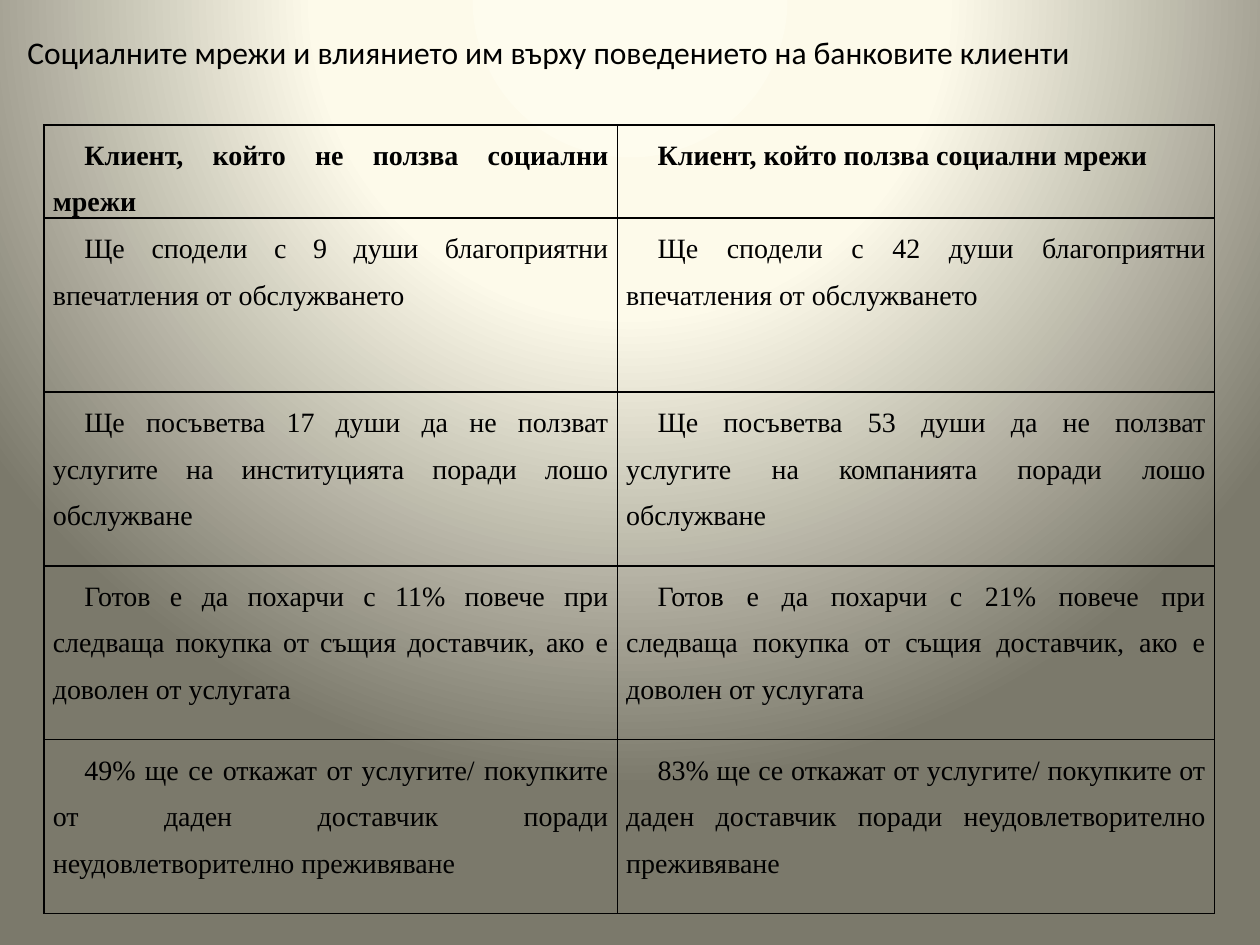
from dataclasses import dataclass

from pptx import Presentation
from pptx.dml.color import RGBColor
from pptx.enum.text import MSO_ANCHOR, MSO_AUTO_SIZE, PP_ALIGN
from pptx.oxml import parse_xml
from pptx.oxml.ns import nsdecls, qn
from pptx.util import Inches, Pt


@dataclass(frozen=True)
class Theme:
    ink: str = "000000"
    glow: tuple = ((0, "FEFCEE"), (40, "FDFAEA"), (100, "7B796B"))
    title_font: str = "Calibri"
    table_font: str = "Times New Roman"
    title_size: int = 18
    table_size: int = 16
    border_width: int = 1


@dataclass(frozen=True)
class Comparison:
    offline: str
    social: str


THEME = Theme()
WIDTH, HEIGHT = 10, 7.5
COLUMNS = (4.55, 4.74)
HEADER_HEIGHT, ROW_HEIGHT = 0.69, 1.38
TITLE = "Социалните мрежи и влиянието им върху поведението на банковите клиенти"
COMPARISONS = (
    Comparison("Клиент, който не ползва социални мрежи",
               "Клиент, който ползва социални мрежи"),
    Comparison("Ще сподели с 9 души благоприятни впечатления от обслужването",
               "Ще сподели с 42 души благоприятни впечатления от обслужването"),
    Comparison("Ще посъветва 17 души да не ползват услугите на институцията поради лошо обслужване",
               "Ще посъветва 53 души да не ползват услугите на компанията поради лошо обслужване"),
    Comparison("Готов е да похарчи с 11% повече при следваща покупка от същия доставчик, "
               "ако е доволен от услугата",
               "Готов е да похарчи с 21% повече при следваща покупка от същия доставчик, "
               "ако е доволен от услугата"),
    Comparison("49% ще се откажат от услугите/ покупките от даден доставчик поради "
               "неудовлетворително преживяване",
               "83% ще се откажат от услугите/ покупките от даден доставчик поради "
               "неудовлетворително преживяване"),
)


def style_font(font, name: str, size: int, bold: bool = False) -> None:
    font.name, font.size, font.bold = name, Pt(size), bold
    font.color.rgb = RGBColor.from_string(THEME.ink)


def paint_background(page) -> None:
    """Fill the page with a round glow centred above its top edge."""
    page.background.fill.gradient()
    gradient = page.element.find(".//" + qn("a:gradFill"))
    stops = "".join(
        f'<a:gs pos="{share * 1000}"><a:srgbClr val="{color}"/></a:gs>'
        for share, color in THEME.glow)
    gradient.getparent().replace(gradient, parse_xml(
        f'<a:gradFill {nsdecls("a")} rotWithShape="1"><a:gsLst>{stops}</a:gsLst>'
        '<a:path path="circle"><a:fillToRect l="50000" t="-80000" r="50000" b="180000"/>'
        '</a:path></a:gradFill>'))


def add_borders(cell) -> None:
    properties = cell._tc.get_or_add_tcPr()
    for position, side in enumerate("LRTB"):
        properties.insert(position, parse_xml(
            f'<a:ln{side} {nsdecls("a")} w="{Pt(THEME.border_width)}">'
            f'<a:solidFill><a:srgbClr val="{THEME.ink}"/></a:solidFill></a:ln{side}>'))


def fill_cell(cell, text: str, bold: bool) -> None:
    cell.fill.background()
    add_borders(cell)
    cell.margin_left = cell.margin_right = Inches(0.07)
    cell.margin_top = cell.margin_bottom = 0
    cell.vertical_anchor = MSO_ANCHOR.TOP
    para = cell.text_frame.paragraphs[0]
    para.text = text
    para.alignment = PP_ALIGN.JUSTIFY
    para.line_spacing = 1.5
    indents = para._p.get_or_add_pPr()
    indents.set("marL", "0")
    indents.set("indent", str(Inches(0.25)))
    style_font(para.runs[0].font, THEME.table_font, THEME.table_size, bold)


def add_comparison_table(page) -> None:
    heights = [HEADER_HEIGHT] + [ROW_HEIGHT] * (len(COMPARISONS) - 1)
    table = page.shapes.add_table(
        len(heights), len(COLUMNS), Inches(0.35), Inches(0.99),
        Inches(sum(COLUMNS)), Inches(sum(heights))).table
    table.horz_banding = False
    for column, width in zip(table.columns, COLUMNS):
        column.width = Inches(width)
    for index, (row, height, entry) in enumerate(zip(table.rows, heights, COMPARISONS)):
        row.height = Inches(height)
        for cell, text in zip(row.cells, (entry.offline, entry.social)):
            fill_cell(cell, text, bold=index == 0)


def add_title(page) -> None:
    box = page.shapes.add_textbox(Inches(0.12), Inches(0.21), Inches(9.53), Inches(0.4))
    frame = box.text_frame
    frame.word_wrap = True
    frame.auto_size = MSO_AUTO_SIZE.SHAPE_TO_FIT_TEXT
    frame.text = TITLE
    style_font(frame.paragraphs[0].runs[0].font, THEME.title_font, THEME.title_size)


def main() -> None:
    deck = Presentation()
    deck.slide_width, deck.slide_height = Inches(WIDTH), Inches(HEIGHT)
    page = deck.slides.add_slide(deck.slide_layouts[6])
    paint_background(page)
    add_comparison_table(page)
    add_title(page)
    deck.save("out.pptx")


if __name__ == "__main__":
    main()
